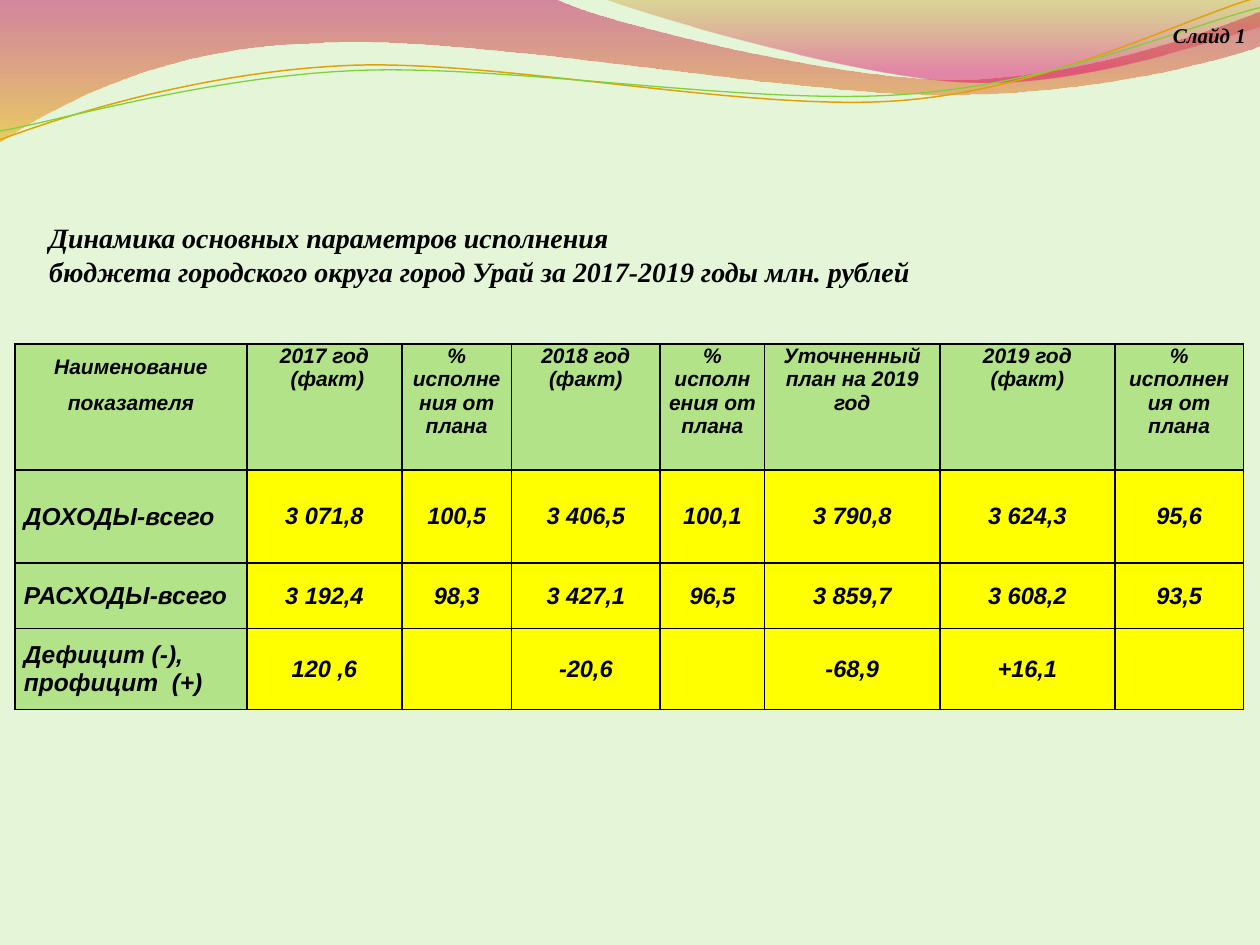
"""Build a slide with the main budget parameters of a city district for 2017-2019."""
from lxml.etree import SubElement
from pptx import Presentation
from pptx.dml.color import RGBColor
from pptx.enum.text import MSO_ANCHOR, MSO_AUTO_SIZE, PP_ALIGN
from pptx.oxml.ns import qn
from pptx.util import Inches, Pt

THEME = {
    "background": RGBColor.from_string("E5F6D8"),
    "label_fill": RGBColor.from_string("B2E389"),
    "value_fill": RGBColor.from_string("FFFF00"),
    "text": RGBColor.from_string("000000"),
    "border": "000000",
    "waves": [[(0, "BD0059", 45), (1, "F0AB00", 55)], [(0, "C38B00", 30), (0.8, "E1006B", 45)]],
    "threads": [("E0A209", 0.85), ("7FD13B", 0.75)],
    "serif": "Times New Roman",
    "sans": "Arial",
    "title_size": Pt(16),
    "small_size": Pt(12),
    "label_size": Pt(14),
    "value_size": Pt(13.5),
}


def draw_outline(slide, start, segments, close):
    """Draw straight (x, y) and cubic (x1, y1, x2, y2, x, y) segments as one freeform."""
    points = [(Inches(segment[i]), Inches(segment[i + 1]))
              for segment in segments for i in range(0, len(segment), 2)]
    builder = slide.shapes.build_freeform(Inches(start[0]), Inches(start[1]))
    builder.add_line_segments(points, close=close)
    shape = builder.convert_to_shape()
    shape.shadow.inherit = False
    lines = iter(list(shape.element.spPr.iter(qn("a:lnTo"))))
    for segment in segments:
        line = next(lines)
        if len(segment) == 6:
            line.tag = qn("a:cubicBezTo")
            for following in (next(lines), next(lines)):
                line.append(following[0])
                following.getparent().remove(following)
    return shape


def write_text(text_frame, text, font_name, size, alignment, line_spacing=None):
    """Write one bold italic paragraph for each line of text."""
    for index, line in enumerate(text.split("\n")):
        paragraph = text_frame.paragraphs[0] if index == 0 else text_frame.add_paragraph()
        paragraph.alignment = alignment
        paragraph.line_spacing = line_spacing
        run = paragraph.add_run()
        run.text = line
        for name, value in {"name": font_name, "size": size, "bold": True, "italic": True}.items():
            setattr(run.font, name, value)
        run.font.color.rgb = THEME["text"]


presentation = Presentation()
presentation.slide_width = Inches(10)
presentation.slide_height = Inches(7.5)
slide = presentation.slides.add_slide(presentation.slide_layouts[5])
slide.background.fill.solid()
slide.background.fill.fore_color.rgb = THEME["background"]

waves = [
    ((0, 0),
     [(4.4, -0.01), (4.76, 0.17, 6.64, 0.63, 7.58, 0.63), (8.53, 0.63, 9.58, 0.26, 10, 0.09),
      (10.01, 0.36), (9.83, 0.44, 8.7, 0.76, 7.46, 0.75), (6.22, 0.75, 3.82, 0.28, 2.57, 0.34),
      (1.29, 0.36, 0.46, 0.83, -0.01, 1.13)]),
    ((4.79, -0.01),
     [(5.09, 0.11, 6.82, 0.62, 7.69, 0.65), (8.56, 0.69, 9.61, 0.32, 10, 0.21), (10, 0)]),
]
for (start, segments), stops in zip(waves, THEME["waves"]):
    wave = draw_outline(slide, start, segments, close=True)
    wave.line.fill.background()
    wave.fill.gradient()
    wave.fill.gradient_angle = 270
    for stop, (position, color, opacity) in zip(wave.fill.gradient_stops, stops):
        stop.position = position
        stop.color.rgb = RGBColor.from_string(color)
    for color_element, (position, color, opacity) in zip(
            wave.element.spPr.iter(qn("a:srgbClr")), stops):
        SubElement(color_element, qn("a:alpha"), val=str(opacity * 1000))

threads = [
    ((0, 1.11),
     [(0.48, 0.93, 1.58, 0.57, 2.77, 0.52), (3.95, 0.47, 5.93, 0.89, 7.13, 0.8),
      (8.33, 0.71, 9.38, 0.15, 9.98, -0.02)]),
    ((0, 1.04),
     [(0.47, 0.96, 1.64, 0.61, 2.83, 0.56), (4.03, 0.51, 5.97, 0.84, 7.17, 0.75),
      (8.36, 0.67, 9.41, 0.21, 10, 0.06)]),
]
for (start, segments), (color, width) in zip(threads, THEME["threads"]):
    thread = draw_outline(slide, start, segments, close=False)
    thread.fill.background()
    thread.line.color.rgb = RGBColor.from_string(color)
    thread.line.width = Pt(width)

title = slide.shapes.title
for name, value in {"left": -0.2, "top": 1.7, "width": 8.98, "height": 0.64}.items():
    setattr(title, name, Inches(value))
title_frame = title.text_frame
title_format = {"word_wrap": True, "auto_size": MSO_AUTO_SIZE.SHAPE_TO_FIT_TEXT,
                "vertical_anchor": MSO_ANCHOR.TOP}
for name, value in title_format.items():
    setattr(title_frame, name, value)
write_text(title_frame, "Динамика основных параметров исполнения\n"
           "бюджета городского округа город Урай за 2017-2019 годы млн. рублей",
           THEME["serif"], THEME["title_size"], PP_ALIGN.LEFT)
for paragraph in title_frame.paragraphs:
    properties = paragraph._p.get_or_add_pPr()
    properties.set("marL", "0")
    properties.set("indent", str(Inches(0.49)))

share = "% исполнения от плана"
rows = [
    ["Наименование показателя", "2017 год\n (факт)", share, "2018 год (факт)", share,
     "Уточненный план на 2019 год", "2019 год (факт)", share],
    ["ДОХОДЫ-всего", "3 071,8", "100,5", "3 406,5", "100,1", "3 790,8", "3 624,3", "95,6"],
    ["РАСХОДЫ-всего", "3 192,4", "98,3", "3 427,1", "96,5", "3 859,7", "3 608,2", "93,5"],
    ["Дефицит (-), профицит  (+)", "120 ,6", "", "-20,6", "", "-68,9", "+16,1", ""],
]
column_widths = [1.84, 1.23, 0.87, 1.18, 0.83, 1.39, 1.39, 1.02]
row_heights = [1, 0.74, 0.52, 0.64]
table = slide.shapes.add_table(len(rows), len(column_widths), Inches(0.12), Inches(2.73),
                               Inches(sum(column_widths)), Inches(sum(row_heights))).table
table.first_row = False
table.horz_banding = False
for column, width in zip(table.columns, column_widths):
    column.width = Inches(width)
for row, height in zip(table.rows, row_heights):
    row.height = Inches(height)

for row_index, row_texts in enumerate(rows):
    for column_index, text in enumerate(row_texts):
        cell = table.cell(row_index, column_index)
        is_header, is_label = row_index == 0, column_index == 0
        cell_format = {
            "margin_left": Inches(0.07), "margin_right": Inches(0.07),
            "margin_top": 0, "margin_bottom": 0,
            "vertical_anchor": MSO_ANCHOR.TOP if is_header else MSO_ANCHOR.MIDDLE,
        }
        for name, value in cell_format.items():
            setattr(cell, name, value)
        cell_properties = cell._tc.get_or_add_tcPr()
        for side in ("a:lnL", "a:lnR", "a:lnT", "a:lnB"):
            border = SubElement(cell_properties, qn(side), w=str(Pt(1)))
            border_fill = SubElement(border, qn("a:solidFill"))
            SubElement(border_fill, qn("a:srgbClr"), val=THEME["border"])
        cell.fill.solid()
        cell.fill.fore_color.rgb = THEME["label_fill" if is_header or is_label else "value_fill"]
        if text:
            size = "small_size" if is_header else "label_size" if is_label else "value_size"
            alignment = PP_ALIGN.LEFT if is_label and not is_header else PP_ALIGN.CENTER
            write_text(cell.text_frame, text, THEME["sans"], THEME[size], alignment,
                       1.5 if is_header and is_label else None)

slide_label = slide.shapes.add_textbox(Inches(9.21), Inches(0.13), Inches(0.79), Inches(0.3))
slide_label.text_frame.word_wrap = False
slide_label.text_frame.auto_size = MSO_AUTO_SIZE.SHAPE_TO_FIT_TEXT
write_text(slide_label.text_frame, "Слайд 1", THEME["serif"], THEME["small_size"], PP_ALIGN.LEFT)

presentation.save("out.pptx")
